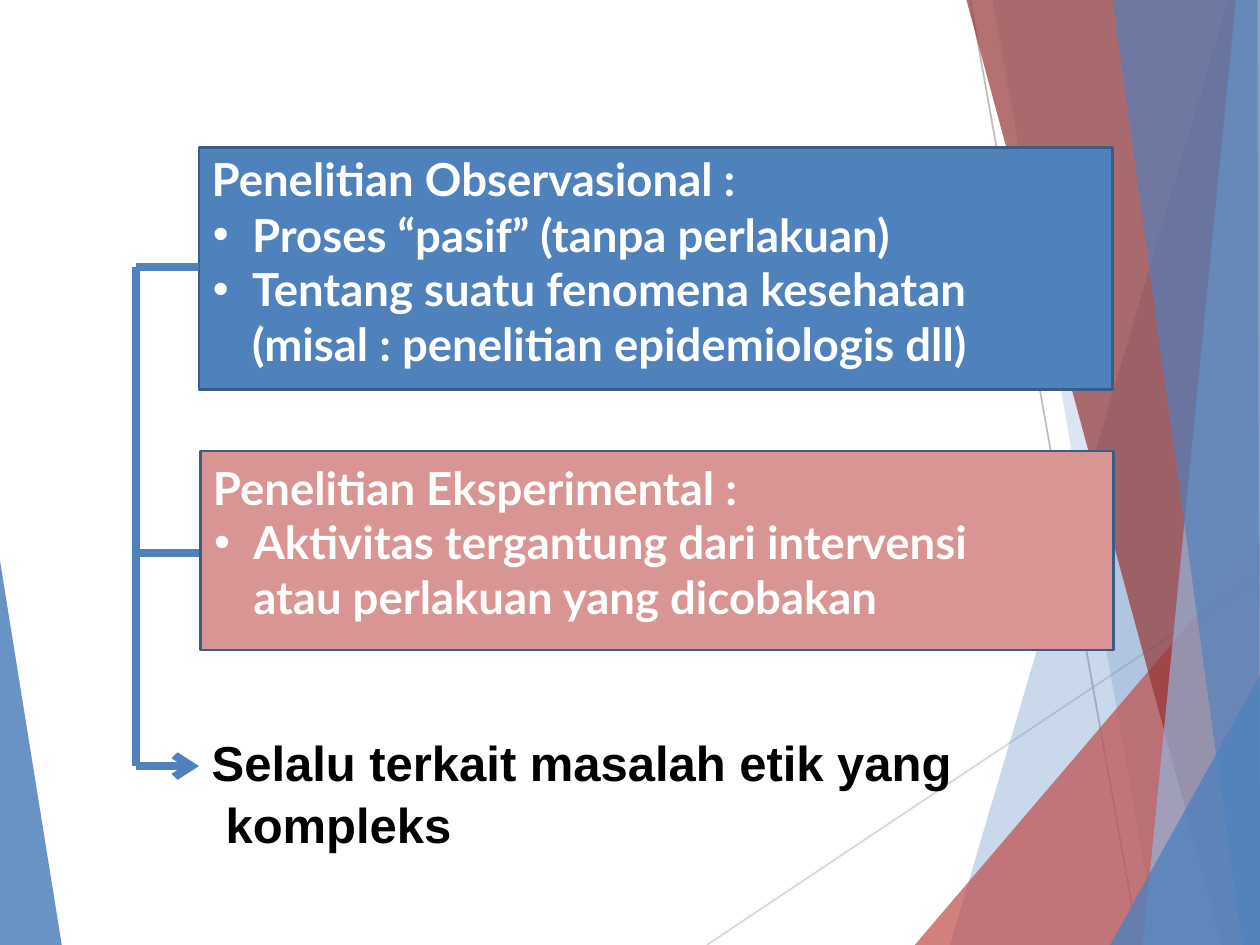
from pptx import Presentation
from pptx.dml.color import RGBColor
from pptx.enum.shapes import MSO_CONNECTOR, MSO_SHAPE
from pptx.enum.text import MSO_ANCHOR, MSO_AUTO_SIZE, PP_ALIGN
from pptx.oxml.ns import qn
from pptx.util import Emu, Inches, Pt
from lxml.etree import SubElement

COLS, ROWS = 100, 75
BLUE, RED, EDGE, WHITE, BLACK = "4F81BC", "C0504D", "385D89", "FFFFFF", "000000"


def rgb(color):
    """Turn a hex string into a colour."""
    return RGBColor.from_string(color)


class Deck:
    """Holds the style and the current slide, measured on a grid of columns and rows."""

    def __init__(self, prs):
        """Open a title and content slide."""
        self.col, self.row = prs.slide_width // COLS, prs.slide_height // ROWS
        self.slide = prs.slides.add_slide(prs.slide_layouts[1])
        self.shapes = self.slide.shapes

    def at(self, x, y):
        """Turn columns and rows into lengths."""
        return Emu(round(x * self.col)), Emu(round(y * self.row))

    def facet(self, points, color, opacity):
        """Draw a translucent polygon."""
        start, *rest = [self.at(*point) for point in points]
        builder = self.shapes.build_freeform(*start, scale=1.0)
        builder.add_line_segments(rest, close=True)
        sp = builder.convert_to_shape()
        sp.shadow.inherit = False
        sp.fill.solid()
        sp.fill.fore_color.rgb = rgb(color)
        clr = sp.fill._xPr.find(qn("a:solidFill"))[0]
        SubElement(clr, qn("a:alpha"), val=str(opacity * 1000))
        sp.line.fill.background()

    def line(self, start, end, color, width, arrow=False):
        """Draw a straight line, with an open arrowhead on request."""
        cxn = self.shapes.add_connector(MSO_CONNECTOR.STRAIGHT, *self.at(*start), *self.at(*end))
        cxn.line.color.rgb = rgb(color)
        cxn.line.width = Pt(width)
        if arrow:
            SubElement(cxn.line._get_or_add_ln(), qn("a:tailEnd"), type="arrow", w="med", len="med")
        SubElement(cxn._element.spPr, qn("a:effectLst"))

    def panel(self, x, y, w, h, color):
        """Draw an outlined box."""
        sp = self.shapes.add_shape(MSO_SHAPE.RECTANGLE, *self.at(x, y), *self.at(w, h))
        sp.shadow.inherit = False
        sp.fill.solid()
        sp.fill.fore_color.rgb = rgb(color)
        sp.line.color.rgb = rgb(EDGE)
        sp.line.width = Pt(1.5)

    def text(self, sp, x, y, w, h, lines, font="Lato", size=26, color=WHITE):
        """Place and format lines given as (text, bullet, left, hang, space before, spacing)."""
        self.shapes._spTree.append(sp._element)
        sp.left, sp.top = self.at(x, y)
        sp.width, sp.height = self.at(w, h)
        tf = sp.text_frame
        tf.word_wrap, tf.auto_size = True, MSO_AUTO_SIZE.NONE
        tf.vertical_anchor = MSO_ANCHOR.TOP
        tf.margin_left = tf.margin_right = tf.margin_bottom = 0
        tf.margin_top = Inches(0.01)
        for i, (words, bullet, left, hang, before, spacing) in enumerate(lines):
            p = tf.add_paragraph() if i else tf.paragraphs[0]
            p.text = words
            p.alignment, p.space_before, p.line_spacing = PP_ALIGN.LEFT, Pt(before), spacing
            pPr = p._p.get_or_add_pPr()
            pPr.set("marL", str(Inches(left)))
            pPr.set("indent", str(Inches(-hang)))
            if bullet:
                SubElement(pPr, qn("a:buFont"), typeface="Arial")
                SubElement(pPr, qn("a:buChar"), char="•")
            else:
                SubElement(pPr, qn("a:buNone"))
            for r in p.runs:
                r.font.name, r.font.size, r.font.bold = font, Pt(size), True
                r.font.color.rgb = rgb(color)


def main():
    """Build and save the slide."""
    prs = Presentation()
    prs.slide_width, prs.slide_height = Inches(10), Inches(7.5)
    deck = Deck(prs)
    title, body = deck.slide.placeholders

    deck.facet([(0, 44.5), (0, 75), (4.9, 75)], BLUE, 85)
    deck.line((56.1, 75), (100, 45.7), "D9D9D9", 1)
    deck.line((77, 0), (90.4, 75), "BEBEBE", 1)
    for points, color, opacity in [
        ([(97.5, 0), (75.4, 75), (100, 75), (100, 0)], BLUE, 30),
        ([(100, 0), (78.8, 0), (91.9, 75), (100, 75)], BLUE, 20),
        ([(100, 42.9), (72.6, 75), (100, 75)], RED, 72),
        ([(100, 0), (76.7, 0), (97, 75), (100, 75)], "943735", 70),
        ([(100, 0), (98.1, 0), (90.7, 75), (100, 75)], "94B3D6", 70),
        ([(99.8, 0), (88.3, 0), (98.6, 75), (100, 75), (99.8, 2.7)], BLUE, 65),
        ([(100, 53.6), (88.1, 75), (100, 75)], BLUE, 80),
    ]:
        deck.facet(points, color, opacity)

    deck.panel(15.8, 11.7, 72.5, 19.2, BLUE)
    deck.panel(15.9, 35.8, 72.5, 15.8, "D99593")
    deck.text(title, 16.7, 11.9, 44.2, 4.6,
              [("Penelitian Observasional :", False, 0.01, 0, 1, 1)])
    deck.text(body, 16.7, 16.3, 65, 33.1, [
        ("Proses “pasif” (tanpa perlakuan)", True, 0.33, 0.31, 1, 1),
        ("Tentang suatu fenomena kesehatan\v(misal : penelitian epidemiologis dll)",
         True, 0.33, 0.31, 0, 1),
        ("Penelitian Eksperimental :", False, 0.02, 0, 51, 1),
        ("Aktivitas tergantung dari intervensi\vatau perlakuan yang dicobakan",
         True, 0.34, 0.31, 0, 1),
    ])

    spine, edge, top, bottom = 10.8, 15.8, 21.2, 60.8
    deck.line((spine, top), (spine, bottom), BLUE, 4.5)
    for y in (top, 43.9, bottom):
        deck.line((spine, y), (edge, y), BLUE, 4.5, arrow=y == bottom)

    note = deck.shapes.add_textbox(0, 0, 0, 0)
    deck.text(note, 16.7, 57.8, 59.1, 9.6,
              [("Selalu terkait masalah etik yang\vkompleks", False, 0.12, 0.11, 1, 1.05)],
              font="Arial", size=28, color=BLACK)
    prs.save("out.pptx")


if __name__ == "__main__":
    main()
